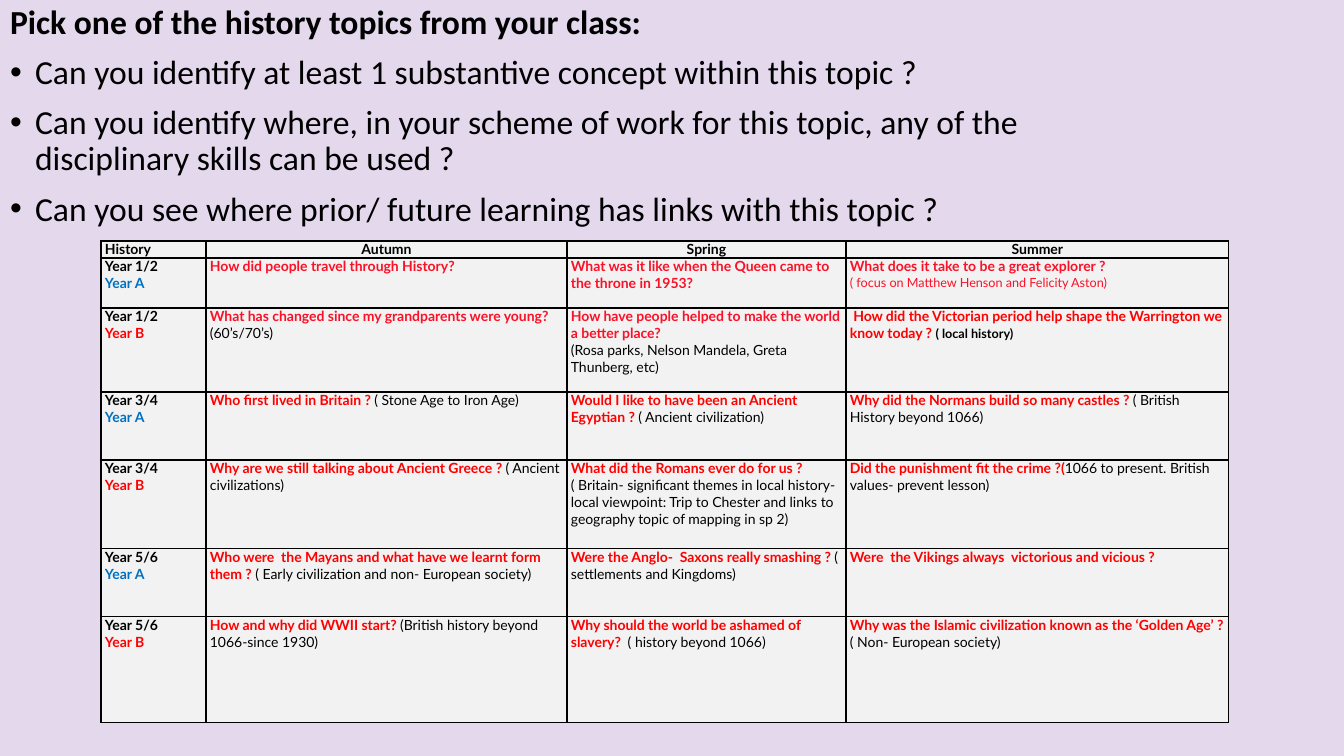
"""Build the history topics slide with its prompts and curriculum table."""
from dataclasses import dataclass

from lxml import etree
from pptx import Presentation
from pptx import util as u
from pptx.dml.color import RGBColor
from pptx.enum import text
from pptx.oxml.ns import qn


@dataclass(frozen=True)
class Theme:
    background: str = "E4D8ED"
    cell: str = "F2F2F2"
    black: str = "000000"
    red: str = "FF0000"
    crimson: str = "FB1127"
    blue: str = "0070C0"
    prompt_font: str = "Calibri"
    table_font: str = "Lato"
    prompt_size: int = 24
    table_size: int = 10
    small_size: int = 9
    prompt_gap: int = 10
    border: int = 1


@dataclass(frozen=True)
class Span:
    text: str
    color: str
    bold: bool = True
    size: int = Theme.table_size
    font: str = Theme.table_font


Line = tuple[Span, ...]
Cell = tuple[Line, ...]

THEME = Theme()
SCALE = 914400 / 100.8
INDENT = 25
COLUMN_WIDTHS = (105, 361, 279, 383)
ROW_HEIGHTS = (17, 50, 84, 68, 89, 68, 106)
HEADINGS = ("History", "Autumn", "Spring", "Summer")
PROMPTS = (
    "Pick one of the history topics from your class:",
    "Can you identify at least 1 substantive concept within this topic ?",
    "Can you identify where, in your scheme of work for this topic, any of the disciplinary skills can be used ?",
    "Can you see where prior/ future learning has links with this topic ?",
)


def px(length: int) -> u.Emu:
    return u.Emu(round(length * SCALE))


def label(words: str) -> Span:
    return Span(words, THEME.black)


def red(words: str) -> Span:
    return Span(words, THEME.red)


def crimson(words: str) -> Span:
    return Span(words, THEME.crimson)


def note(words: str) -> Span:
    return Span(words, THEME.black, bold=False)


def topic(question: Span, detail: str) -> Cell:
    return ((question, note(detail)),)


TOPICS: tuple[tuple[Cell, Cell, Cell], ...] = (
    (
        ((crimson("How did people travel through History?"),),),
        ((crimson("What was it like when the Queen came to the throne in 1953?"),),),
        (
            (crimson("What does it take to be a great explorer ?"),),
            (Span("( focus on Matthew Henson and Felicity Aston)", THEME.crimson, False, THEME.small_size),),
        ),
    ),
    (
        topic(crimson("What has changed since my grandparents were young? "), "(60’s/70’s)"),
        (
            (crimson("How have people helped to make the world a better place?"),),
            (note("(Rosa parks, Nelson Mandela, Greta Thunberg, etc)"),),
        ),
        ((
            red(" How did the Victorian period help shape the Warrington we know today ? "),
            Span("( local history)", THEME.black, size=THEME.small_size),
        ),),
    ),
    (
        topic(red("Who first lived in Britain ? "), "( Stone Age to Iron Age)"),
        topic(red("Would I like to have been an Ancient Egyptian ? "), "( Ancient civilization)"),
        topic(red("Why did the Normans build so many castles ? "), "( British History beyond 1066)"),
    ),
    (
        topic(red("Why are we still talking about Ancient Greece ? "), "( Ancient civilizations)"),
        (
            (red("What did the Romans ever do for us ?"),),
            (note("( Britain- significant themes in local history- local viewpoint: "
                  "Trip to Chester and links to geography topic of mapping in sp 2)"),),
        ),
        topic(red("Did the punishment fit the crime ?("), "1066 to present. British values- prevent lesson)"),
    ),
    (
        topic(red("Who were  the Mayans and what have we learnt form  them ? "),
              "( Early civilization and non- European society)"),
        topic(red("Were the Anglo-  Saxons really smashing ? "), "(  settlements and Kingdoms)"),
        ((red("Were  the Vikings always  victorious and vicious ?"),),),
    ),
    (
        topic(red("How and why did WWII start? "), "(British history beyond 1066-since 1930)"),
        topic(red("Why should the world be ashamed of slavery?  "), "( history beyond 1066)"),
        topic(red("Why was the Islamic civilization known as the ‘Golden Age’ ? "), "( Non- European society)"),
    ),
)


def year_cell(index: int) -> Cell:
    first = index // 2 * 2 + 1
    year = red("Year B") if index % 2 else Span("Year A", THEME.blue)
    return (label(f"Year {first}/{first + 1}"),), (year,)


def add_span(paragraph, span: Span) -> None:
    run = paragraph.add_run()
    run.text = span.text
    run.font.name = span.font
    run.font.size = u.Pt(span.size)
    run.font.bold = span.bold
    run.font.color.rgb = RGBColor.from_string(span.color)


def add_lines(frame, lines: Cell) -> None:
    for index, line in enumerate(lines):
        paragraph = frame.add_paragraph() if index else frame.paragraphs[0]
        for span in line:
            add_span(paragraph, span)


def set_bullet(paragraph, bulleted: bool) -> None:
    properties = paragraph._p.get_or_add_pPr()
    properties.set("marL", str(px(INDENT) if bulleted else 0))
    properties.set("indent", str(-px(INDENT) if bulleted else 0))
    if bulleted:
        etree.SubElement(properties, qn("a:buFont"), typeface="Arial")
        etree.SubElement(properties, qn("a:buChar"), char="•")
    else:
        etree.SubElement(properties, qn("a:buNone"))


def fill_prompts(body) -> None:
    body.left, body.top, body.width, body.height = px(0), px(0), px(1159), px(242)
    frame = body.text_frame
    frame.word_wrap = True
    frame.auto_size = text.MSO_AUTO_SIZE.NONE
    frame.vertical_anchor = text.MSO_ANCHOR.TOP
    add_lines(frame, tuple(
        (Span(prompt, THEME.black, index == 0, THEME.prompt_size, THEME.prompt_font),)
        for index, prompt in enumerate(PROMPTS)
    ))
    for index, paragraph in enumerate(frame.paragraphs):
        paragraph.line_spacing = 0.9
        paragraph.space_before = u.Pt(THEME.prompt_gap)
        set_bullet(paragraph, index > 0)


def style_cell(cell) -> None:
    cell.margin_left = cell.margin_right = px(4)
    cell.margin_top = cell.margin_bottom = px(0)
    properties = cell._tc.get_or_add_tcPr()
    for side in ("lnL", "lnR", "lnT", "lnB"):
        line = etree.SubElement(properties, qn(f"a:{side}"), w=str(u.Pt(THEME.border)))
        fill = etree.SubElement(line, qn("a:solidFill"))
        etree.SubElement(fill, qn("a:srgbClr"), val=THEME.black)
    cell.fill.solid()
    cell.fill.fore_color.rgb = RGBColor.from_string(THEME.cell)


def add_topics(slide) -> None:
    table = slide.shapes.add_table(
        len(ROW_HEIGHTS), len(COLUMN_WIDTHS), px(101), px(241), px(sum(COLUMN_WIDTHS)), px(sum(ROW_HEIGHTS))
    ).table
    table.first_row = table.horz_banding = False
    for column, width in zip(table.columns, COLUMN_WIDTHS):
        column.width = px(width)
    header = tuple(((label(heading),),) for heading in HEADINGS)
    rows = (header, *((year_cell(index), *topics) for index, topics in enumerate(TOPICS)))
    for row, height, contents in zip(table.rows, ROW_HEIGHTS, rows):
        row.height = px(height)
        for cell, lines in zip(row.cells, contents):
            style_cell(cell)
            add_lines(cell.text_frame, lines)
    for cell in list(table.rows[0].cells)[1:]:
        cell.text_frame.paragraphs[0].alignment = text.PP_ALIGN.CENTER


def main() -> None:
    presentation = Presentation()
    presentation.slide_width, presentation.slide_height = px(1344), px(756)
    slide = presentation.slides.add_slide(presentation.slide_layouts[1])
    slide.background.fill.solid()
    slide.background.fill.fore_color.rgb = RGBColor.from_string(THEME.background)
    title = slide.shapes.title.element
    title.getparent().remove(title)
    fill_prompts(slide.placeholders[1])
    add_topics(slide)
    presentation.save("out.pptx")


if __name__ == "__main__":
    main()
